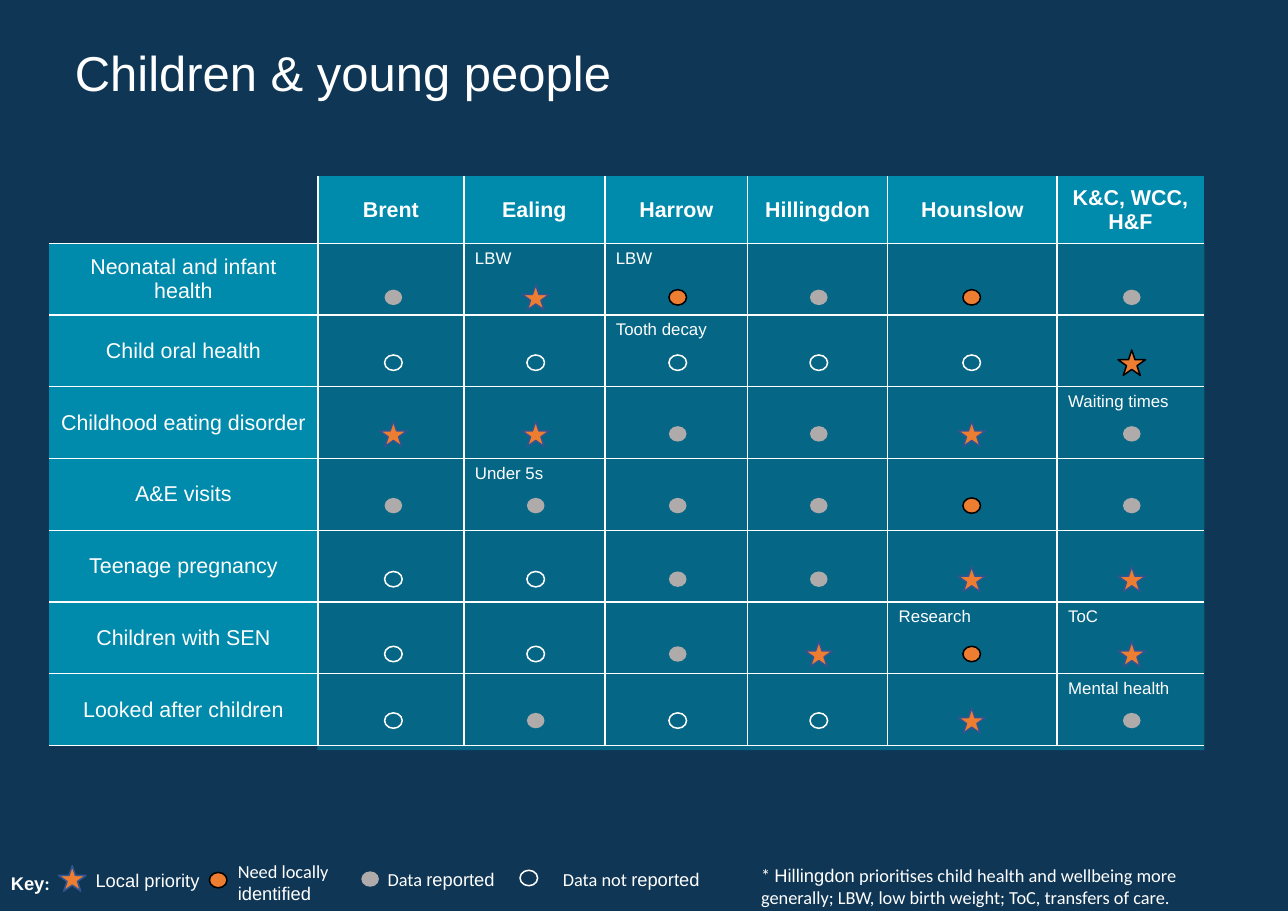
from dataclasses import dataclass

from lxml import etree
from pptx import Presentation
from pptx.dml.color import RGBColor
from pptx.enum.shapes import MSO_SHAPE
from pptx.enum.text import MSO_ANCHOR, PP_ALIGN
from pptx.oxml import parse_xml
from pptx.oxml.ns import nsdecls, qn
from pptx.util import Pt

RECTANGLE = MSO_SHAPE.RECTANGLE
DOT = MSO_SHAPE.FLOWCHART_CONNECTOR
STAR = MSO_SHAPE.STAR_5_POINT
MIDDLE = MSO_ANCHOR.MIDDLE
CENTER = PP_ALIGN.CENTER


@dataclass(frozen=True)
class Theme:
    navy: str = "0F3654"
    teal: str = "008AAB"
    white: str = "FFFFFF"
    grey: str = "AFABAB"
    orange: str = "ED7D31"
    blue: str = "325491"
    black: str = "000000"
    title_size: float = 32
    heading_size: float = 14
    key_size: float = 12
    note_size: float = 11


theme = Theme()

# Preset, width, height, fill, outline
MARKERS = {
    "priority": (STAR, 18, 16.6, theme.orange, theme.blue),
    "outlined priority": (STAR, 18, 16.6, theme.orange, theme.black),
    "need": (DOT, 11.5, 10.1, theme.orange, theme.black),
    "reported": (DOT, 11.5, 10.1, theme.grey, None),
    "not reported": (DOT, 11.5, 10.1, None, theme.white),
}
LETTERS = {"P": "priority", "B": "outlined priority", "N": "need",
           "R": "reported", "-": "not reported"}

BOROUGHS = ["Brent", "Ealing", "Harrow", "Hillingdon", "Hounslow", "K&C, WCC, H&F"]
COLUMN_WIDTHS = [175.8, 95.4, 92.1, 93.4, 91.5, 110.7, 95.8]
MARKER_CENTERS = [257.1, 350.1, 442.9, 535.1, 635, 739.6]
HEADER_HEIGHT, ROW_HEIGHT = 44.1, 46.9

# Topic, marker centre, one marker letter per borough, notes by table column
TOPICS = [
    ("Neonatal and infant health", 194.4, "RPNRNR", {2: "LBW", 3: "LBW"}),
    ("Child oral health", 237.1, "-----B", {3: "Tooth decay"}),
    ("Childhood eating disorder", 283.6, "PPRRPR", {6: "Waiting times"}),
    ("A&E visits", 330.5, "RRRRNR", {2: "Under 5s"}),
    ("Teenage pregnancy", 378.6, "--RRPP", {}),
    ("Children with SEN", 427.5, "--RPNP", {5: "Research", 6: "ToC"}),
    ("Looked after children", 471, "-R--PR", {6: "Mental health"}),
]

# Left, top, width, height, size, bold, runs as (text, font)
TEXTS = [
    (41.8, 28.8, 563, 62.6, theme.title_size, False, [("Children & young people", "Arial")]),
    (0, 566.6, 112.3, 21.6, theme.key_size, True, [("Key", "Arial"), (":", "Calibri")]),
    (55.4, 564.5, 83.5, 21.6, theme.key_size, False, [("Local priority", "Arial")]),
    (148.3, 558.7, 83.5, 36, theme.key_size, False,
     [("Need locally ", "Calibri"), ("identified", "Arial")]),
    (246.2, 563.8, 138.2, 21.6, theme.key_size, False,
     [("Data ", "Calibri"), ("reported", "Arial")]),
    (360.7, 563.8, 138.2, 21.6, theme.key_size, False,
     [("Data not ", "Calibri"), ("reported", "Arial")]),
    (490.3, 561.6, 336.2, 36, theme.key_size, False,
     [("* ", "Calibri"), ("Hillingdon", "Arial"),
      (" prioritises child health and wellbeing more generally; "
       "LBW, low birth weight; ToC, transfers of care.", "Calibri")]),
]

KEY_MARKERS = [("priority", 47.2, 574.2), ("need", 142.6, 575.3),
               ("reported", 241.9, 574.6), ("not reported", 345.6, 573.9)]


def add_marker(name, center_x, center_y):
    preset, width, height, fill, outline = MARKERS[name]
    shape = slide.shapes.add_shape(preset, Pt(center_x - width / 2), Pt(center_y - height / 2),
                                   Pt(width), Pt(height))
    shape.shadow.inherit = False
    if fill:
        shape.fill.solid()
        shape.fill.fore_color.rgb = RGBColor.from_string(fill)
    else:
        shape.fill.background()
    if outline:
        shape.line.color.rgb = RGBColor.from_string(outline)
        shape.line.width = Pt(1)
    else:
        shape.line.fill.background()


def style_font(font, size, bold=False, name="Arial"):
    font.name = name
    font.size = Pt(size)
    font.bold = bold
    font.color.rgb = RGBColor.from_string(theme.white)


presentation = Presentation()
presentation.slide_width = Pt(841.68)
presentation.slide_height = Pt(595.44)
slide = presentation.slides.add_slide(presentation.slide_layouts[6])
slide.background.fill.solid()
slide.background.fill.fore_color.rgb = RGBColor.from_string(theme.navy)

# Translucent panel behind the markers
panel = slide.shapes.add_shape(RECTANGLE, Pt(207.4), Pt(158.4), Pt(579.6), Pt(331.9))
panel.shadow.inherit = False
panel.fill.solid()
panel.fill.fore_color.rgb = RGBColor.from_string(theme.teal)
panel.line.fill.background()
panel_color = panel.fill._xPr.find(qn("a:solidFill"))[0]
etree.SubElement(panel_color, qn("a:alpha"), val="58000")

# Title, key and footnote
for left, top, width, height, size, bold, runs in TEXTS:
    box = slide.shapes.add_textbox(Pt(left), Pt(top), Pt(width), Pt(height))
    box.text_frame.word_wrap = True
    paragraph = box.text_frame.paragraphs[0]
    if size == theme.title_size:
        paragraph.line_spacing = 0.9
    for text, font_name in runs:
        run = paragraph.add_run()
        run.text = text
        style_font(run.font, size, bold, font_name)

for name, center_x, center_y in KEY_MARKERS:
    add_marker(name, center_x, center_y)

for topic, center_y, letters, notes in TOPICS:
    for center_x, letter in zip(MARKER_CENTERS, letters):
        add_marker(LETTERS[letter], center_x, center_y)

# Table of topics by borough
row_count, column_count = len(TOPICS) + 1, len(COLUMN_WIDTHS)
table = slide.shapes.add_table(
    row_count, column_count, Pt(32), Pt(115), Pt(sum(COLUMN_WIDTHS)),
    Pt(HEADER_HEIGHT + len(TOPICS) * ROW_HEIGHT)).table
table.first_row = False
table.horz_banding = False
for column, width in zip(table.columns, COLUMN_WIDTHS):
    column.width = Pt(width)
for row_index, row in enumerate(table.rows):
    row.height = Pt(ROW_HEIGHT if row_index else HEADER_HEIGHT)
    if row_index:
        topic, _, _, notes = TOPICS[row_index - 1]
        texts = [topic] + [notes.get(column, "") for column in range(1, column_count)]
    else:
        texts = [""] + BOROUGHS
    for column_index, text in enumerate(texts):
        cell = table.cell(row_index, column_index)
        is_heading = (row_index == 0) != (column_index == 0)
        borders = {"lnL": column_index > 0, "lnR": column_index < column_count - 1,
                   "lnT": row_index > 0, "lnB": True}
        for tag, visible in borders.items():
            paint = (f'<a:solidFill><a:srgbClr val="{theme.white}"/></a:solidFill>'
                     if visible else "<a:noFill/>")
            cell._tc.get_or_add_tcPr().append(
                parse_xml(f'<a:{tag} {nsdecls("a")} w="12700">{paint}</a:{tag}>'))
        if is_heading:
            cell.fill.solid()
            cell.fill.fore_color.rgb = RGBColor.from_string(theme.teal)
            cell.vertical_anchor = MIDDLE
        else:
            cell.fill.background()
        if text:
            cell.text_frame.text = text
            paragraph = cell.text_frame.paragraphs[0]
            if is_heading:
                paragraph.alignment = CENTER
            style_font(paragraph.runs[0].font,
                       theme.heading_size if is_heading else theme.note_size,
                       bold=row_index == 0)

presentation.save("out.pptx")
